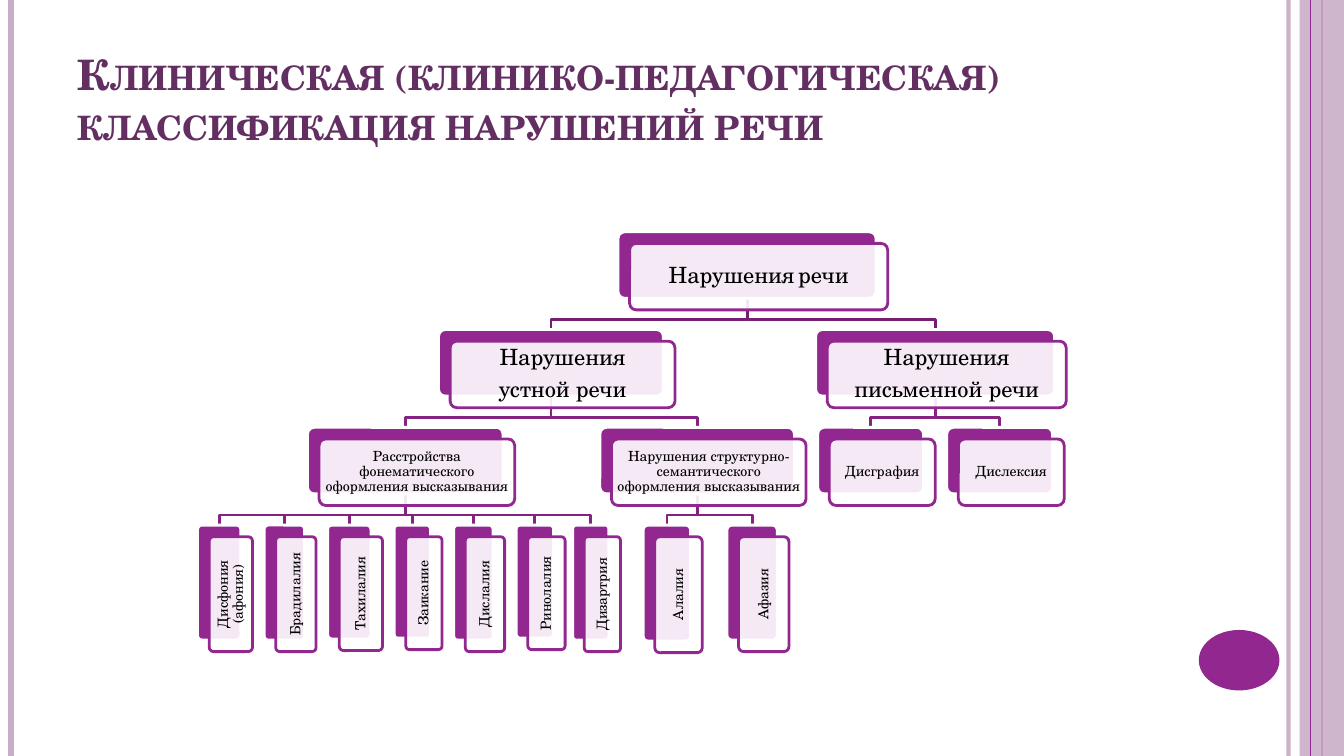
import dataclasses

import lxml.etree
import pptx
import pptx.dml.color
import pptx.enum.shapes
import pptx.enum.text
import pptx.oxml.ns
import pptx.util

Inches = pptx.util.Inches
Pt = pptx.util.Pt
SHAPE = pptx.enum.shapes.MSO_SHAPE
ALIGN = pptx.enum.text.PP_ALIGN
ANCHOR = pptx.enum.text.MSO_ANCHOR
qn = pptx.oxml.ns.qn


@dataclasses.dataclass(frozen=True)
class Theme:
    """Colours, font and type sizes of the slide."""
    font: str = "TeX Gyre Schola"
    purple: str = "92278F"
    lilac: str = "C7ADC6"
    title: str = "632E62"
    branch_top: str = "751F73"
    branch: str = "852382"
    white: str = "FFFFFF"
    black: str = "000000"
    title_size: int = 30
    head_size: int = 16
    gap_size: int = 9
    item_size: int = 10


@dataclasses.dataclass(frozen=True)
class Node:
    """One card of the tree: paragraphs, left offset, size and children."""
    lines: tuple
    left: float
    width: float
    height: float = 0.66
    children: tuple = ()


THEME = Theme()
LEVEL_STEP = 0.97
BEND = 0.21
CARD_SHIFT = 0.115


def leaf(text, left, width, height=0.66):
    """Return a node without children."""
    return Node((text,), left, width, height)


SOUND = Node(("Расстройства фонематического оформления высказывания",), 1.09, 1.94, children=(
    leaf("Дисфония (афония)", 0, 0.43, 1.14),
    leaf("Брадилалия", 0.66, 0.4, 1.14),
    leaf("Тахилалия", 1.29, 0.43, 1.13),
    leaf("Заикание", 1.95, 0.36, 1.12),
    leaf("Дислалия", 2.54, 0.39, 1.14),
    leaf("Ринолалия", 3.16, 0.37, 1.12),
    leaf("Дизартрия", 3.72, 0.36, 1.14)))
STRUCTURE = Node(("Нарушения структурно-семантического оформления высказывания",), 3.99, 1.93, children=(
    leaf("Алалия", 4.42, 0.47, 1.15),
    leaf("Афазия", 5.25, 0.5, 1.14)))
ORAL = Node(("Нарушения", "устной речи"), 2.39, 2.23, children=(SOUND, STRUCTURE))
WRITTEN = Node(("Нарушения", "письменной речи"), 6.13, 2.37, children=(
    leaf("Дисграфия", 6.15, 1.05),
    leaf("Дислексия", 7.43, 1.05)))
ROOT = Node(((("Нарушения", THEME.head_size), (" ", THEME.gap_size), ("речи", THEME.head_size)),),
            4.17, 2.56, children=(ORAL, WRITTEN))


def rgb(value):
    """Return a colour object for a hex string."""
    return pptx.dml.color.RGBColor.from_string(value)


def set_alpha(fill_parent, percent):
    """Make the solid colour inside an element partly transparent."""
    color = fill_parent.find(qn("a:solidFill"))[0]
    lxml.etree.SubElement(color, qn("a:alpha")).set("val", str(percent * 1000))


def write_text(tf, lines, size, color=THEME.black, align=ALIGN.CENTER, anchor=ANCHOR.MIDDLE,
               inset=0.04, bold=False, small_caps=False, spacing=0.9, after=0.35, vertical=False):
    """Fill a text frame with paragraphs of plain text or (text, size) runs."""
    tf.word_wrap = True
    tf.auto_size = pptx.enum.text.MSO_AUTO_SIZE.NONE
    tf.vertical_anchor = anchor
    tf.margin_left = tf.margin_right = Inches(inset)
    tf.margin_top = tf.margin_bottom = Inches(min(inset, 0.07))
    if vertical:
        tf._txBody.bodyPr.set("vert", "vert270")
    for i, line in enumerate(lines):
        p = tf.add_paragraph() if i else tf.paragraphs[0]
        p.alignment, p.line_spacing = align, spacing
        p.space_before, p.space_after = Pt(0), Pt(after * size)
        for text, run_size in [(line, size)] if isinstance(line, str) else line:
            r = p.add_run()
            r.text = text
            r.font.name, r.font.size, r.font.bold = THEME.font, Pt(run_size), bold
            r.font.color.rgb = rgb(color)
            if small_caps:
                r._r.get_or_add_rPr().set("cap", "small")


def add_box(slide, kind, box, fill, line=None, alpha=None):
    """Draw a preset shape with its fill and optional outline."""
    sp = slide.shapes.add_shape(kind, *map(Inches, box))
    sp.shadow.inherit = False
    sp.fill.solid()
    sp.fill.fore_color.rgb = rgb(fill)
    if alpha:
        set_alpha(sp._element.spPr, alpha)
    if line:
        sp.line.color.rgb, sp.line.width = rgb(line), Pt(2)
    else:
        sp.line.fill.background()
    if kind == SHAPE.ROUNDED_RECTANGLE:
        sp.adjustments[0] = 0.1
    return sp


def add_rule(slide, x, top, height, color, width, alpha=None):
    """Draw one vertical rule."""
    line = slide.shapes.add_connector(pptx.enum.shapes.MSO_CONNECTOR.STRAIGHT,
                                      Inches(x), Inches(top), Inches(x), Inches(top + height))
    line.line.color.rgb, line.line.width = rgb(color), Pt(width)
    if alpha:
        set_alpha(line.line._ln, alpha)
    lxml.etree.SubElement(line._element.spPr, qn("a:effectLst"))


def add_frame(slide, box):
    """Draw the side rules, the right band and the oval."""
    left, top, width, height = box
    right = left + width
    add_rule(slide, right - 0.55, top, height, THEME.lilac, 3, alpha=93)
    add_rule(slide, left + 0.11, top, height, THEME.lilac, 4.5)
    add_rule(slide, right - 0.22, top, height, THEME.purple, 1.5)
    add_box(slide, SHAPE.RECTANGLE, (right - 0.44, top, 0.44, height), THEME.lilac, alpha=87)
    add_rule(slide, right - 0.33, top, height, THEME.purple, 0.75)
    add_box(slide, SHAPE.OVAL, (right - 1.44, top + height - 1.25, 0.8, 0.6), THEME.purple)


def add_title(slide, box, text):
    """Place and format the title placeholder."""
    sp = slide.shapes.title
    sp.left, sp.top, sp.width, sp.height = map(Inches, box)
    write_text(sp.text_frame, (text,), THEME.title_size, color=THEME.title, align=ALIGN.LEFT,
               anchor=ANCHOR.BOTTOM, inset=0.1, bold=True, small_caps=True, spacing=1, after=0)


def add_branches(slide, node, left, top, level=0):
    """Draw the elbow lines from a node down to all its descendants."""
    x, bottom = left + node.left + node.width / 2, top + node.height
    child_top = top + LEVEL_STEP
    for child in node.children:
        child_x = left + child.left + child.width / 2
        points = [(x, bottom), (x, bottom + BEND), (child_x, bottom + BEND), (child_x, child_top)]
        points = [(Inches(px), Inches(py)) for px, py in points]
        builder = slide.shapes.build_freeform(*points[0])
        builder.add_line_segments(points[1:], close=False)
        sp = builder.convert_to_shape()
        sp.shadow.inherit = False
        sp.fill.background()
        sp.line.color.rgb = rgb(THEME.branch if level else THEME.branch_top)
        sp.line.width = Pt(2)
        add_branches(slide, child, left, child_top, level + 1)


def add_cards(slide, node, left, top, level=0):
    """Draw the two plates of a node and then those of its descendants."""
    x = left + node.left
    add_box(slide, SHAPE.ROUNDED_RECTANGLE, (x, top, node.width, node.height),
            THEME.purple, line=THEME.white)
    sp = add_box(slide, SHAPE.ROUNDED_RECTANGLE,
                 (x + CARD_SHIFT, top + CARD_SHIFT, node.width, node.height),
                 THEME.white, line=THEME.purple, alpha=90)
    is_head = level < 2
    write_text(sp.text_frame, node.lines, THEME.head_size if is_head else THEME.item_size,
               inset=0.07 if is_head else 0.04, vertical=node.height > node.width)
    for child in node.children:
        add_cards(slide, child, left, top + LEVEL_STEP, level + 1)


def add_tree(slide, box, root):
    """Draw the classification tree from the top left corner of its box."""
    left, top = box[:2]
    add_branches(slide, root, left, top)
    add_cards(slide, root, left, top)


def main():
    """Build the slide and save it."""
    prs = pptx.Presentation()
    prs.slide_width, prs.slide_height = Inches(13.33), Inches(7.5)
    slide = prs.slides.add_slide(prs.slide_layouts[5])
    add_frame(slide, (0, 0, 13.33, 7.5))
    add_title(slide, (0.67, 0.3, 10.89, 1.25),
              "Клиническая (клинико-педагогическая) классификация нарушений речи")
    add_tree(slide, (1.96, 2.3, 8.61, 4.17), ROOT)
    prs.save("out.pptx")


if __name__ == "__main__":
    main()
